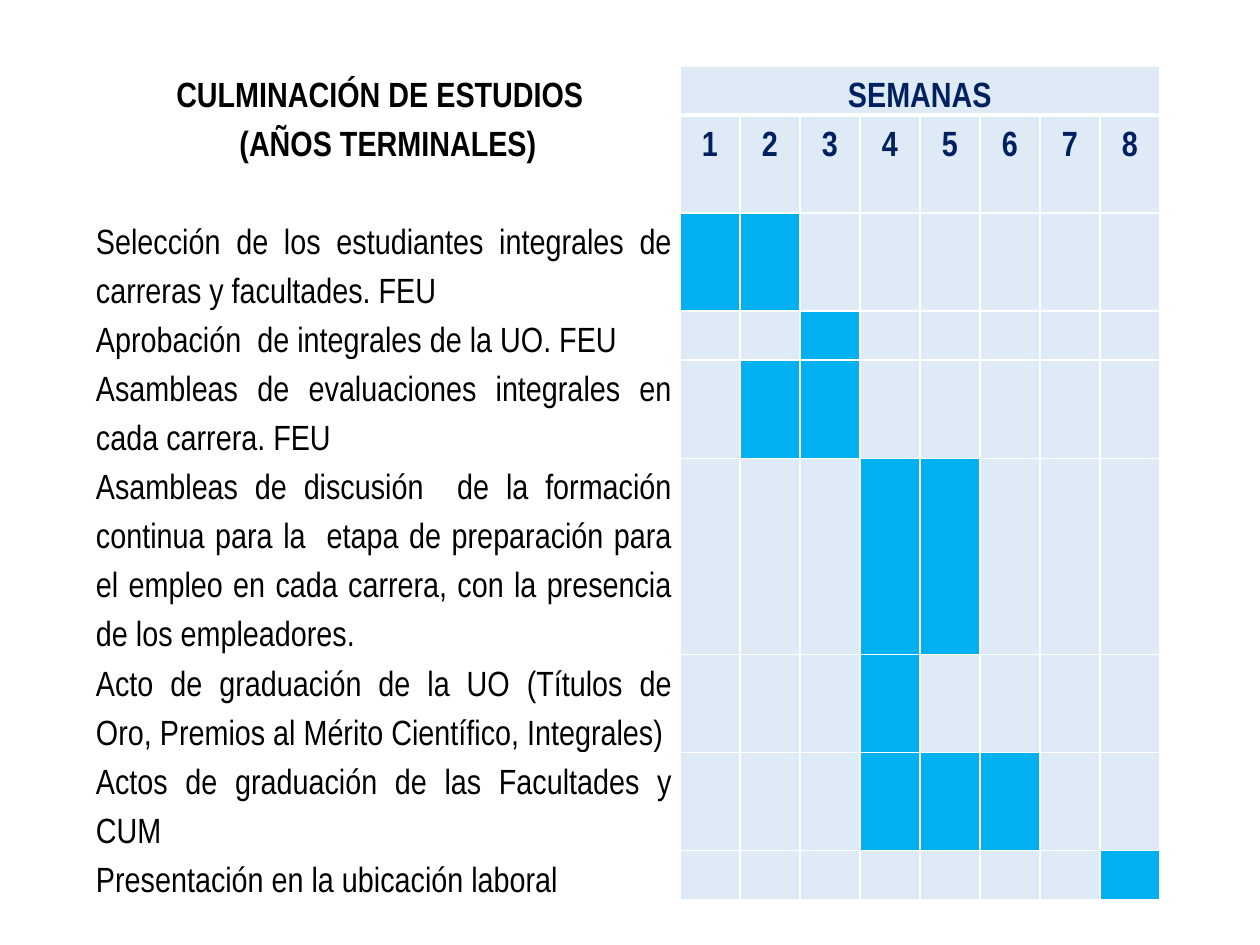
from lxml import etree
from pptx import Presentation
from pptx.dml.color import RGBColor
from pptx.enum.text import PP_ALIGN
from pptx.oxml.ns import qn
from pptx.util import Pt

CENTER, JUSTIFY = PP_ALIGN.CENTER, PP_ALIGN.JUSTIFY
SCALE = 914400 / 126
COLORS = {"white": "FFFFFF", "black": "000000", "navy": "002060",
          "pale": "DEEBF7", "bar": "00B0F0"}
LINE, WEEKS = 49, 8
LEFT, TOP, TASK_W, WEEK_W = 88, 66, 592, 60

TITLE = ["CULMINACIÓN DE ESTUDIOS ", " (AÑOS TERMINALES)"]
# Task, lines of text, first week, last week
TASKS = [
    ("Selección de los estudiantes integrales de carreras y facultades. FEU", 2, 1, 2),
    ("Aprobación  de integrales de la UO. FEU", 1, 3, 3),
    ("Asambleas de evaluaciones integrales en cada carrera. FEU", 2, 2, 3),
    ("Asambleas de discusión  de la formación continua para la  etapa de "
     "preparación para el empleo en cada carrera, con la presencia de los "
     "empleadores.", 4, 4, 5),
    ("Acto de graduación de la UO (Títulos de Oro, Premios al Mérito Científico, "
     "Integrales)", 2, 4, 4),
    ("Actos de graduación de las Facultades y CUM", 2, 4, 6),
    ("Presentación en la ubicación laboral", 1, 8, 8),
]


def px(n):
    return round(n * SCALE)


class Deck:
    def __init__(self, wide, high):
        self.font, self.size, self.lead = "Arial Narrow", Pt(20), Pt(28)
        self.prs = Presentation()
        self.prs.slide_width, self.prs.slide_height = px(wide), px(high)
        self.slide = self.prs.slides.add_slide(self.prs.slide_layouts[6])

    def grid(self, left, top, cols, rows):
        frame = self.slide.shapes.add_table(
            len(rows), len(cols), px(left), px(top), px(sum(cols)), px(sum(rows)))
        table = frame.table
        table.first_row = table.horz_banding = False
        for col, wide in zip(table.columns, cols):
            col.width = px(wide)
        for row, high in zip(table.rows, rows):
            row.height = px(high)
        return table

    def paint(self, cell, color, top=1, bottom=1):
        """Set fill, margins and white borders; top and bottom are in points."""
        cell.margin_left = cell.margin_right = px(8)
        cell.margin_top = cell.margin_bottom = 0
        cell.fill.solid()
        cell.fill.fore_color.rgb = RGBColor.from_string(COLORS[color])
        props = cell._tc.get_or_add_tcPr()
        sides = {"L": 1, "R": 1, "T": top, "B": bottom}
        for spot, (side, wide) in enumerate(sides.items()):
            line = etree.Element(qn(f"a:ln{side}"), w=str(Pt(wide)))
            fill = etree.SubElement(line, qn("a:solidFill"))
            etree.SubElement(fill, qn("a:srgbClr"), val=COLORS["white"])
            props.insert(spot, line)

    def label(self, cell, lines, color="black", bold=False, align=CENTER):
        frame = cell.text_frame
        for i, text in enumerate(lines):
            para = frame.add_paragraph() if i else frame.paragraphs[0]
            para.alignment, para.line_spacing = align, self.lead
            run = para.add_run()
            run.text = text
            font = run.font
            font.name, font.size, font.bold = self.font, self.size, bold
            font.color.rgb = RGBColor.from_string(COLORS[color])


def main():
    deck = Deck(1260, 945)
    rows = [LINE, 2 * LINE] + [task[1] * LINE for task in TASKS]
    table = deck.grid(LEFT, TOP, [TASK_W] + [WEEK_W] * WEEKS, rows)

    for col in range(WEEKS + 1):
        color = "pale" if col else "white"
        deck.paint(table.cell(0, col), color, bottom=3)
        deck.paint(table.cell(1, col), color, top=3)
    table.cell(0, 0).merge(table.cell(1, 0))
    table.cell(0, 1).merge(table.cell(0, WEEKS))
    deck.label(table.cell(0, 0), TITLE, bold=True)
    deck.label(table.cell(0, 1), ["SEMANAS"], "navy", True)
    for week in range(1, WEEKS + 1):
        deck.label(table.cell(1, week), [str(week)], "navy", True)

    for row, (name, _, first, last) in enumerate(TASKS, 2):
        task = table.cell(row, 0)
        deck.paint(task, "white")
        deck.label(task, [name], align=JUSTIFY)
        for week in range(1, WEEKS + 1):
            color = "bar" if first <= week <= last else "pale"
            deck.paint(table.cell(row, week), color)
    deck.prs.save("out.pptx")


if __name__ == "__main__":
    main()
